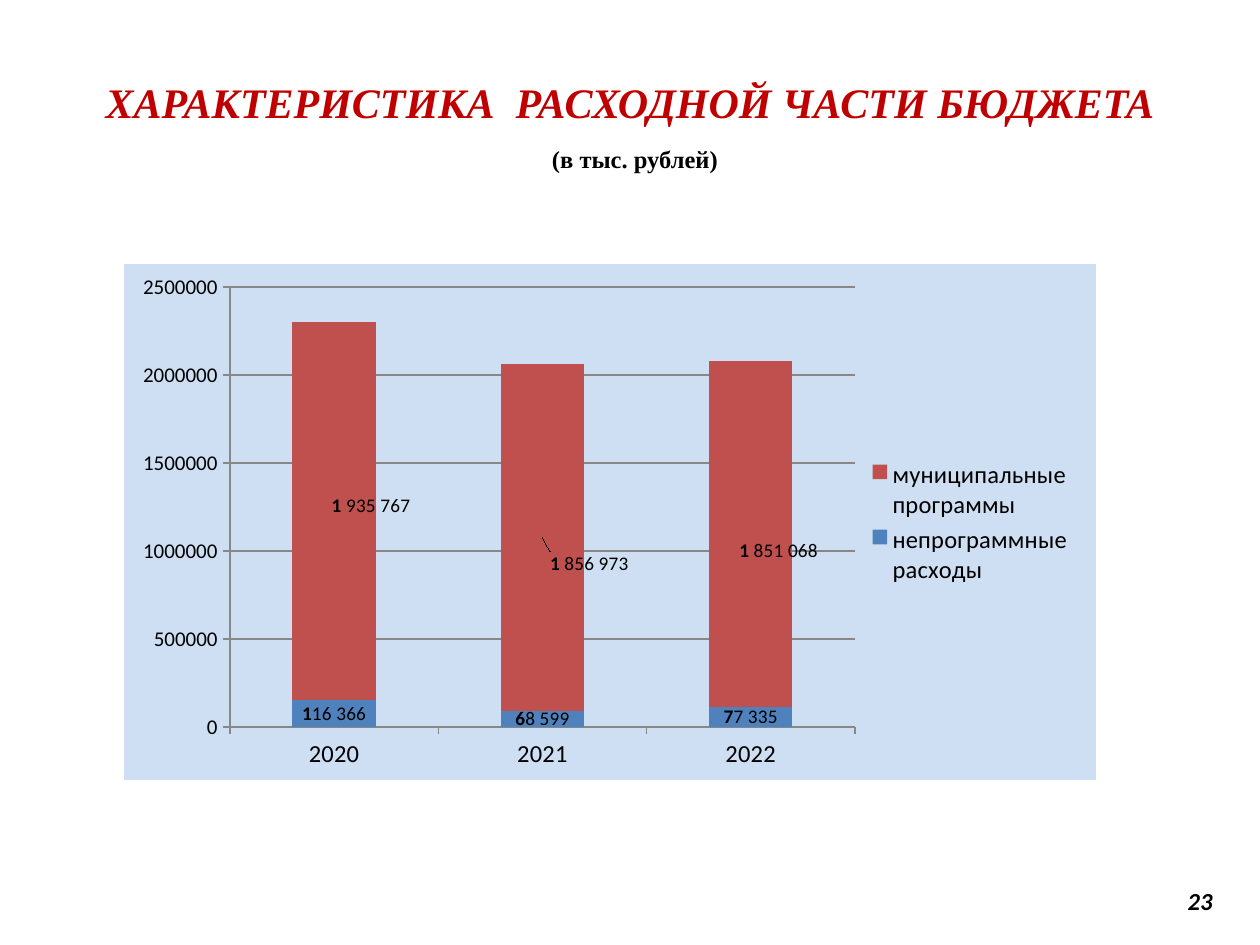
import pptx
import pptx.util
import pptx.chart.data
import pptx.dml.color
import pptx.enum.chart
import pptx.enum.text
import pptx.oxml
import pptx.oxml.ns
from dataclasses import dataclass

PX = 914400 // 126


@dataclass(frozen=True)
class Theme:
    serif: str = "Times New Roman"
    sans: str = "Calibri"
    red: str = "C00000"
    black: str = "000000"
    grid: str = "878787"
    panel: str = "8EB4E3"
    panel_alpha: int = 42000
    title: int = 24
    body: int = 14
    axis: int = 12
    label: int = 11


T = Theme()
YEARS = ["2020", "2021", "2022"]
SERIES = [
    ("непрограммные расходы", "4F81BD", [150000, 90000, 110000],
     [("1", "16 366"), ("6", "8 599"), ("7", "7 335")], [None] * 3),
    ("муниципальные программы", "C0504D", [2150000, 1970000, 1970000],
     [("1", " 935 767"), ("1", " 856 973"), ("1", " 851 068")],
     [(37, -5), (47, 26), (28, 17)]),
]


def px(n):
    return pptx.util.Emu(n * PX)


def rgb(code):
    return pptx.dml.color.RGBColor.from_string(code)


def style(font, face, size, color, bold=False, italic=False):
    font.name, font.size, font.bold, font.italic = face, pptx.util.Pt(size), bold, italic
    font.color.rgb = rgb(color)


def add_run(p, text, *look):
    r = p.add_run()
    r.text = text
    style(r.font, *look)


def layout_xml(frame, lengths, inner=False, edge=True):
    parts = ['<c:layoutTarget val="inner"/>'] if inner else []
    if edge:
        parts += ['<c:xMode val="edge"/>', '<c:yMode val="edge"/>']
    parts += [f'<c:{k} val="{n / full}"/>' for k, n, full in zip("xywh", lengths, frame * 2)]
    ns = pptx.oxml.ns.nsdecls("c")
    body = "".join(parts)
    return pptx.oxml.parse_xml(f"<c:layout {ns}><c:manualLayout>{body}</c:manualLayout></c:layout>")


def set_layout(parent, after, layout):
    old = parent.find(pptx.oxml.ns.qn("c:layout"))
    if old is not None:
        parent.remove(old)
    if after is None:
        parent.insert(0, layout)
    else:
        after.addnext(layout)


def add_box(slide, x, y, w, h):
    tf = slide.shapes.add_textbox(px(x), px(y), px(w), px(h)).text_frame
    tf.word_wrap = True
    return tf


def add_heading(slide, x, y, w, h):
    tf = add_box(slide, x, y, w, h)
    tf.margin_top = tf.margin_bottom = 0
    p = tf.paragraphs[0]
    p.alignment = pptx.enum.text.PP_ALIGN.CENTER
    add_run(p, "ХАРАКТЕРИСТИКА  РАСХОДНОЙ ЧАСТИ БЮДЖЕТА", T.serif, T.title, T.red, True, True)
    p = tf.add_paragraph()
    p.alignment = pptx.enum.text.PP_ALIGN.CENTER
    p.space_before = pptx.util.Pt(9.5)
    p._p.get_or_add_pPr().set("marL", str(px(10)))
    add_run(p, "(в тыс. рублей)", T.serif, T.body, T.black, True)


def add_page_number(slide, x, y, w, h):
    tf = add_box(slide, x, y, w, h)
    tf.vertical_anchor = pptx.enum.text.MSO_ANCHOR.MIDDLE
    p = tf.paragraphs[0]
    p.alignment = pptx.enum.text.PP_ALIGN.RIGHT
    add_run(p, "23", T.sans, T.body, T.black, True, True)


def fill_panel(chart):
    ns = pptx.oxml.ns.nsdecls("c", "a")
    panel = pptx.oxml.parse_xml(
        f'<c:spPr {ns}><a:solidFill><a:srgbClr val="{T.panel}"><a:alpha val="{T.panel_alpha}"/>'
        "</a:srgbClr></a:solidFill><a:ln><a:noFill/></a:ln></c:spPr>")
    chart._chartSpace.chart.addnext(panel)


def style_axis(axis, size):
    style(axis.tick_labels.font, T.sans, size, T.black)
    axis.major_tick_mark = pptx.enum.chart.XL_TICK_MARK.OUTSIDE
    axis.format.line.color.rgb = rgb(T.grid)
    axis.format.line.width = pptx.util.Pt(0.75)


def label_point(point, texts, shift, frame):
    label = point.data_label
    p = label.text_frame.paragraphs[0]
    for text, bold in zip(texts, (True, False)):
        add_run(p, text, T.sans, T.label, T.black, bold)
    label.position = pptx.enum.chart.XL_LABEL_POSITION.CENTER
    if shift:
        dLbl = label._get_or_add_dLbl()
        set_layout(dLbl, dLbl.find(pptx.oxml.ns.qn("c:idx")),
                   layout_xml(frame, shift, edge=False))


def hide_leader_lines(ser):
    ns = pptx.oxml.ns.nsdecls("c")
    ser.data_labels._element.append(pptx.oxml.parse_xml(
        f'<c:extLst {ns}><c:ext uri="{{CE6537A1-D6FC-4f65-9D91-7224C49458BB}}" '
        'xmlns:c15="http://schemas.microsoft.com/office/drawing/2012/chart">'
        '<c15:showLeaderLines val="0"/></c:ext></c:extLst>'))


def add_budget_chart(slide, x, y, w, h):
    data = pptx.chart.data.CategoryChartData(number_format="0")
    data.categories = YEARS
    for name, _, values, _, _ in SERIES:
        data.add_series(name, values)
    kind = pptx.enum.chart.XL_CHART_TYPE.COLUMN_STACKED
    chart = slide.shapes.add_chart(kind, px(x), px(y), px(w), px(h), data).chart
    chart.has_title = False
    style(chart.font, T.sans, T.body, T.black)
    fill_panel(chart)

    frame = (w, h)
    plot = chart.plots[0]
    plot.gap_width, plot.overlap, plot.vary_by_categories = 150, 100, False
    for ser, (_, color, _, texts, shifts) in zip(plot.series, SERIES):
        ser.format.fill.solid()
        ser.format.fill.fore_color.rgb = rgb(color)
        for i, (text, shift) in enumerate(zip(texts, shifts)):
            label_point(ser.points[i], text, shift, frame)
        hide_leader_lines(ser)

    style_axis(chart.category_axis, T.body)
    axis = chart.value_axis
    style_axis(axis, T.axis)
    axis.minimum_scale, axis.maximum_scale, axis.major_unit = 0, 2500000, 500000
    axis.has_major_gridlines = True
    axis.major_gridlines.format.line.color.rgb = rgb(T.grid)
    axis.major_gridlines.format.line.width = pptx.util.Pt(0.75)

    chart.has_legend = True
    legend = chart.legend
    legend.position = pptx.enum.chart.XL_LEGEND_POSITION.RIGHT
    legend.include_in_layout = False
    style(legend.font, T.sans, T.body, T.black)
    pos = legend._element.find(pptx.oxml.ns.qn("c:legendPos"))
    set_layout(legend._element, pos, layout_xml(frame, (734, 191, 224, 135)))
    set_layout(chart._chartSpace.chart.plotArea, None,
               layout_xml(frame, (106, 23, 625, 440), inner=True))


def main():
    prs = pptx.Presentation()
    prs.slide_width, prs.slide_height = px(1260), px(945)
    slide = prs.slides.add_slide(prs.slide_layouts[6])
    add_heading(slide, 0, 77, 1260, 100)
    add_page_number(slide, 902, 876, 323, 50)
    add_budget_chart(slide, 124, 264, 972, 516)
    prs.save("out.pptx")


if __name__ == "__main__":
    main()
